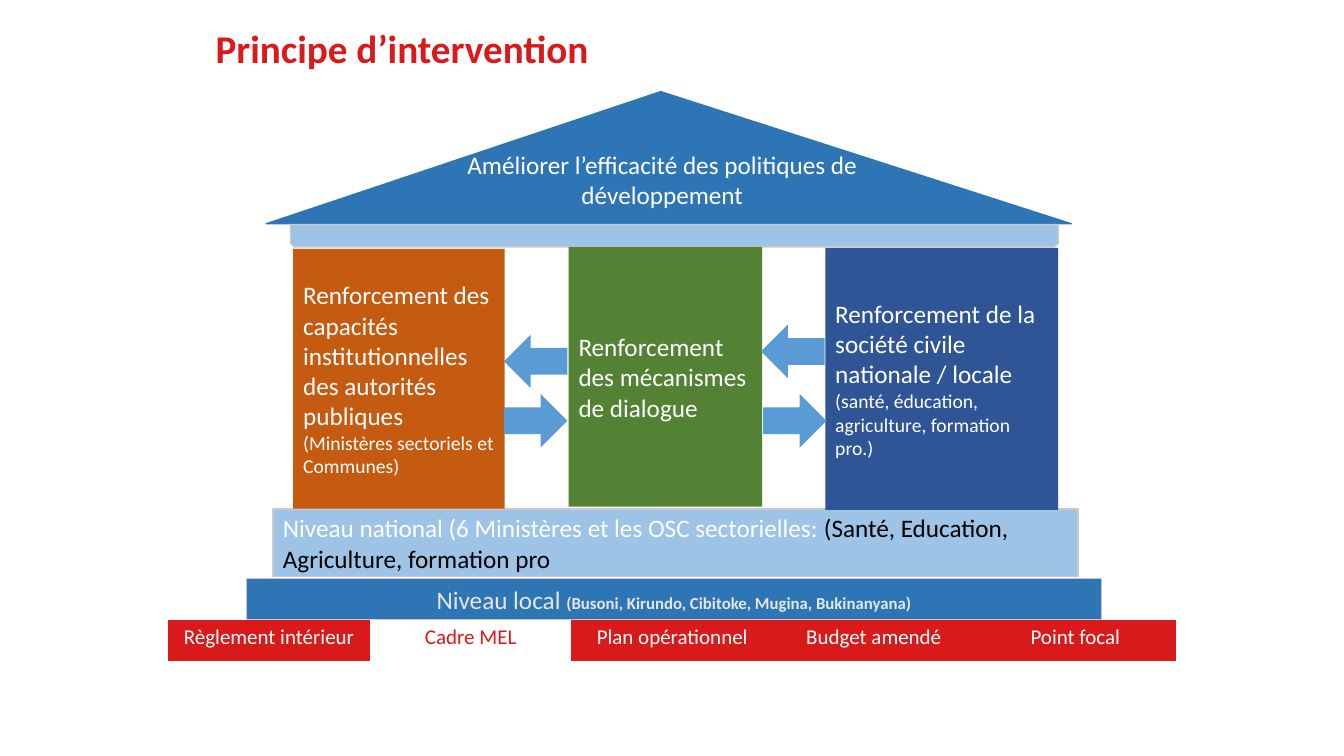
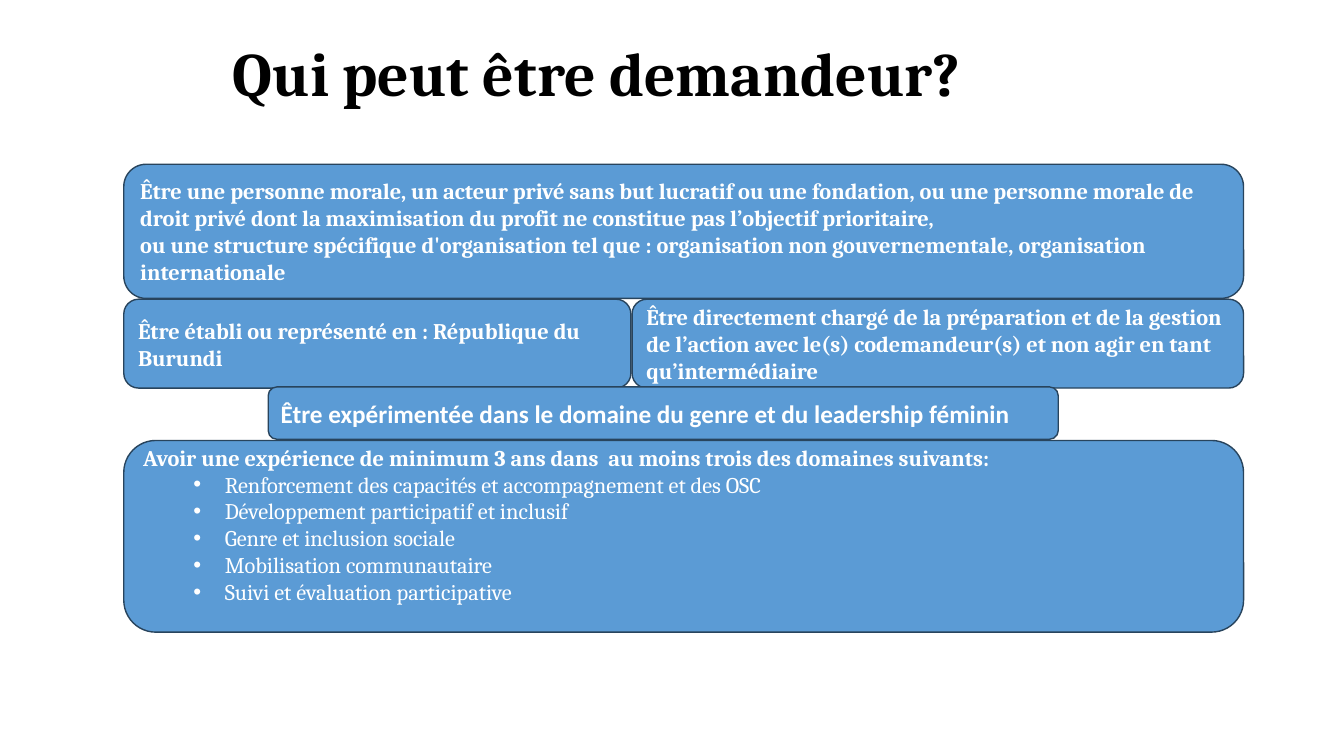
from lxml.etree import SubElement
from pptx import Presentation
from pptx.dml.color import RGBColor
from pptx.enum.shapes import MSO_SHAPE
from pptx.enum.text import MSO_ANCHOR, MSO_AUTO_SIZE, PP_ALIGN
from pptx.oxml.ns import qn
from pptx.util import Cm, Pt

WHITE = RGBColor(0xFF, 0xFF, 0xFF)
BLACK = RGBColor(0x00, 0x00, 0x00)
RED = RGBColor(0xD8, 0x1A, 0x1A)
BLUE = RGBColor(0x2E, 0x75, 0xB6)
LIGHT_BLUE = RGBColor(0x9D, 0xC3, 0xE6)
MID_BLUE = RGBColor(0x5B, 0x9B, 0xD5)
NAVY = RGBColor(0x2F, 0x55, 0x97)
OUTLINE = RGBColor(0x28, 0x44, 0x5D)
ORANGE = RGBColor(0xC5, 0x5A, 0x11)
GREEN = RGBColor(0x54, 0x82, 0x35)
GREY = RGBColor(0xC9, 0xC9, 0xC9)
PALE_GREY = RGBColor(0xE7, 0xE6, 0xE6)
PLAIN_TABLE_STYLE = "{2D5ABB26-0587-4C30-8999-92F81FD0307C}"


def write(frame, paragraphs, align=PP_ALIGN.LEFT, **style):
    """Fill a text frame; a paragraph is a string or a list of (text, style) runs."""
    frame.word_wrap = True
    for index, content in enumerate(paragraphs):
        paragraph = frame.add_paragraph() if index else frame.paragraphs[0]
        paragraph.alignment = align
        runs = [(content, {})] if isinstance(content, str) else content
        for text, changes in runs:
            look = {"size": 18, "font": "Calibri", "color": WHITE, "bold": False, **style, **changes}
            run = paragraph.add_run()
            run.text = text
            run.font.name = look["font"]
            run.font.size = Pt(look["size"])
            run.font.bold = look["bold"]
            run.font.color.rgb = look["color"]


def add_bullet(paragraph):
    """Give a paragraph a hanging bullet."""
    properties = paragraph._p.get_or_add_pPr()
    properties.set("marL", str(Cm(2.06)))
    properties.set("indent", str(-Cm(0.79)))
    SubElement(properties, qn("a:buFont")).set("typeface", "Arial")
    SubElement(properties, qn("a:buChar")).set("char", "•")


class Deck:
    """Holds the presentation, its shared style and the current slide."""

    def __init__(self):
        """Start a widescreen presentation."""
        self.presentation = Presentation()
        self.presentation.slide_width = Cm(33.87)
        self.presentation.slide_height = Cm(19.05)
        self.slide = None

    def add_slide(self, title, box, **style):
        """Open a slide and place its title."""
        self.slide = self.presentation.slides.add_slide(self.presentation.slide_layouts[5])
        shape = self.slide.shapes.title
        shape.left, shape.top, shape.width, shape.height = map(Cm, box)
        frame = shape.text_frame
        frame.auto_size = MSO_AUTO_SIZE.NONE
        frame.vertical_anchor = MSO_ANCHOR.MIDDLE
        write(frame, [title], bold=True, **style)
        frame.paragraphs[0].line_spacing = 0.9

    def add_shape(self, kind, box, fill, line=None, rotation=0, paragraphs=(), **style):
        """Draw a flat preset shape with optional text."""
        shape = self.slide.shapes.add_shape(kind, *map(Cm, box))
        shape.shadow.inherit = False
        shape.rotation = rotation
        shape.fill.solid()
        shape.fill.fore_color.rgb = fill
        if line is None:
            shape.line.fill.background()
        else:
            shape.line.color.rgb = line
            shape.line.width = Pt(1)
        shape.text_frame.vertical_anchor = MSO_ANCHOR.MIDDLE
        write(shape.text_frame, paragraphs, **style)
        return shape

    def add_text(self, box, paragraphs, **style):
        """Place a wrapped text box."""
        shape = self.slide.shapes.add_textbox(*map(Cm, box))
        write(shape.text_frame, paragraphs, **style)

    def add_criterion(self, box, paragraphs, **style):
        """Draw a rounded criterion panel."""
        style = {"font": "Cambria", "size": 16, "bold": True, **style}
        return self.add_shape(MSO_SHAPE.ROUNDED_RECTANGLE, box, MID_BLUE, OUTLINE,
                              paragraphs=paragraphs, **style)

    def add_tabs(self, box, labels, active):
        """Draw a one-row table with the active label inverted."""
        shape = self.slide.shapes.add_table(1, len(labels), *map(Cm, box))
        for style_id in shape.element.xpath(".//a:tableStyleId"):
            style_id.text = PLAIN_TABLE_STYLE
        shape.table.first_row = False
        shape.table.horz_banding = False
        for cell, label in zip(shape.table.rows[0].cells, labels):
            fill, color = (WHITE, RED) if label == active else (RED, WHITE)
            cell.fill.solid()
            cell.fill.fore_color.rgb = fill
            write(cell.text_frame, [label], PP_ALIGN.CENTER, size=15, color=color)


def build_principle(deck):
    """Build the temple of intervention principles."""
    small = {"size": 14}
    rectangle = MSO_SHAPE.RECTANGLE
    deck.add_slide("Principe d’intervention", (5.18, 0.33, 14, 1.9), size=28, color=RED)
    roof = deck.add_shape(MSO_SHAPE.ISOSCELES_TRIANGLE, (6.71, 2.31, 20.29, 3.33), BLUE, BLUE)
    roof.adjustments[0] = 0.49
    deck.add_shape(MSO_SHAPE.SNIP_2_SAME_RECTANGLE, (7.32, 5.66, 19.35, 0.56),
                   LIGHT_BLUE, GREY, rotation=180)
    deck.add_text((10.34, 3.63, 12.7, 1.8),
                  ["Améliorer l’efficacité des politiques de développement"], align=PP_ALIGN.CENTER)
    deck.add_shape(rectangle, (6.88, 12.83, 20.29, 1.7), LIGHT_BLUE, GREY, paragraphs=[[
        ("Niveau national (6 Ministères et les OSC sectorielles: ", {}),
        ("(Santé, Education, Agriculture, formation pro", {"color": BLACK})]])
    deck.add_shape(rectangle, (6.22, 14.58, 21.54, 1.04), BLUE, GREY, paragraphs=[[
        ("Niveau local ", {}),
        ("(Busoni, Kirundo, Cibitoke, Mugina, Bukinanyana)", {"size": 12, "bold": True})]],
        align=PP_ALIGN.CENTER, color=PALE_GREY)
    pillars = [
        ((7.39, 6.27, 5.33, 6.55), ORANGE, [[
            ("Renforcement des capacités institutionnelles des autorités publiques ", {}),
            ("(Ministères sectoriels et Communes)", small)]]),
        ((14.33, 6.22, 4.88, 6.55), GREEN, ["Renforcement des mécanismes de dialogue"]),
        ((20.8, 6.25, 5.87, 6.6), NAVY, [
            "Renforcement de la société civile nationale / locale",
            [("(santé, éducation, agriculture, formation pro.)", small)]]),
    ]
    for box, fill, paragraphs in pillars:
        deck.add_shape(rectangle, box, fill, paragraphs=paragraphs)
    for left, top, rotation in [(12.7, 9.93, 0), (12.7, 8.43, 180),
                                (19.23, 9.93, 0), (19.18, 8.18, 180)]:
        deck.add_shape(MSO_SHAPE.RIGHT_ARROW, (left, top, 1.6, 1.35), MID_BLUE, rotation=rotation)
    deck.add_tabs((4.24, 15.62, 25.4, 1.04),
                  ["Règlement intérieur", "Cadre MEL", "Plan opérationnel",
                   "Budget amendé", "Point focal"], active="Cadre MEL")


def build_applicants(deck):
    """Build the panels of applicant criteria."""
    deck.add_slide("Qui peut être demandeur?", (5.61, 0.58, 24.05, 2.69),
                   size=44, font="Cambria", color=BLACK)
    deck.add_criterion((3.12, 4.14, 28.22, 3.38), [
        "Être une personne morale, un acteur privé sans but lucratif ou une fondation, ou une "
        "personne morale de droit privé dont la maximisation du profit ne constitue pas "
        "l’objectif prioritaire,",
        "ou une structure spécifique d'organisation tel que : organisation non gouvernementale, "
        "organisation internationale"])
    deck.add_criterion((3.12, 7.54, 12.78, 2.24),
                       ["Être établi ou représenté en : République du Burundi"])
    deck.add_criterion((15.93, 7.54, 15.41, 2.24), [
        "Être directement chargé de la préparation et de la gestion de l’action avec le(s) "
        "codemandeur(s) et non agir en tant qu’intermédiaire"])
    deck.add_criterion((6.76, 9.75, 19.91, 1.32),
                       ["Être expérimentée dans le domaine du genre et du leadership féminin"],
                       font="Calibri", size=18)
    domains = ["Renforcement des capacités et accompagnement et des OSC",
               "Développement participatif et inclusif",
               "Genre et inclusion sociale",
               "Mobilisation communautaire",
               "Suivi et évaluation participative"]
    panel = deck.add_criterion((3.12, 11.1, 28.22, 4.83), [
        "Avoir une expérience de minimum 3 ans dans  au moins trois des domaines suivants:",
        *[[(domain, {"bold": False})] for domain in domains]])
    panel.text_frame.margin_top = Cm(0)
    panel.text_frame.margin_bottom = Cm(0.6)
    for paragraph in panel.text_frame.paragraphs[1:]:
        paragraph.level = 1
        add_bullet(paragraph)


def main():
    """Build and save the presentation."""
    deck = Deck()
    build_principle(deck)
    build_applicants(deck)
    deck.presentation.save("out.pptx")


if __name__ == "__main__":
    main()
